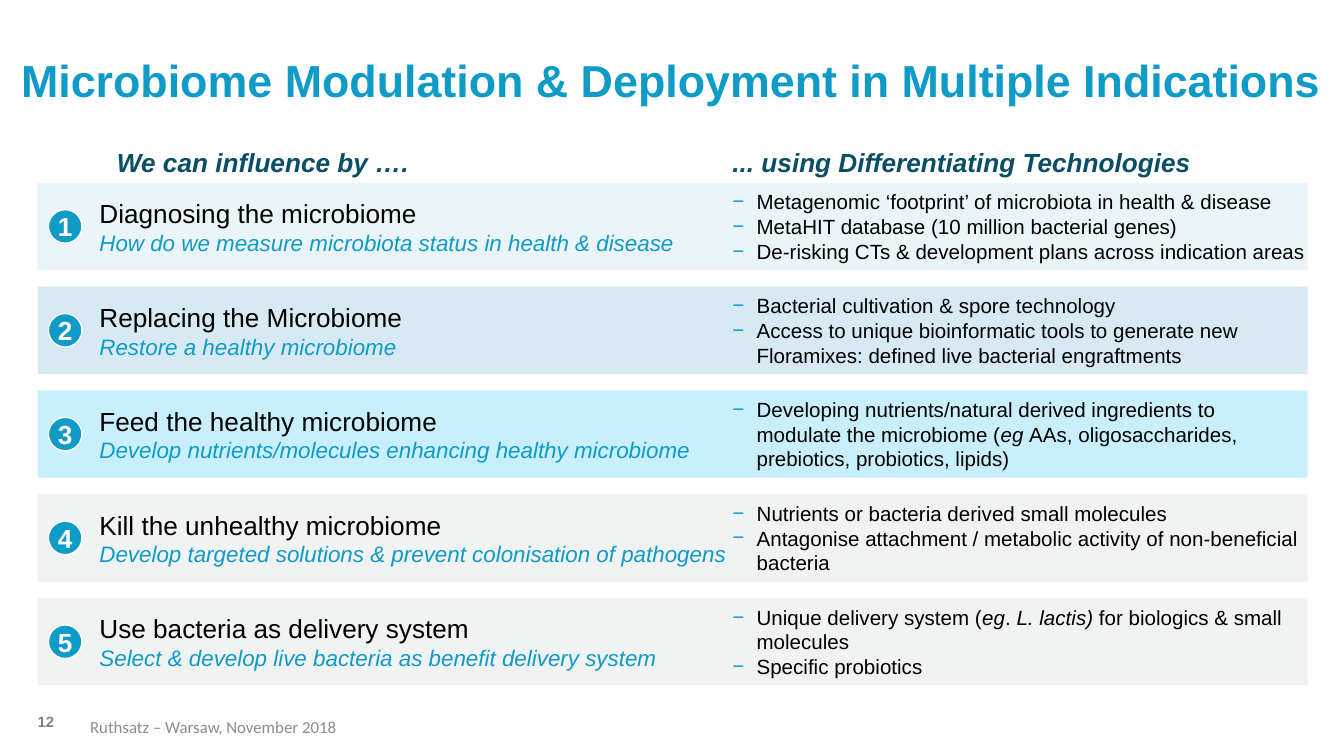
from lxml.etree import SubElement
from pptx import Presentation
from pptx.dml.color import RGBColor
from pptx.enum.shapes import MSO_SHAPE
from pptx.enum.text import MSO_ANCHOR, PP_ALIGN
from pptx.oxml.ns import qn
from pptx.util import Inches, Pt

COLORS = {
    "blue": "0F9BC7", "teal": "084E64", "black": "000000", "white": "FFFFFF",
    "gray": "7B808B", "foot": "8C8C8C",
    "pale": "EBF4F9", "mist": "D7EAF4", "cyan": "C8EFFB", "ash": "F1F2F2",
}
FORMATS = {
    "title": {"size": 24, "bold": True, "color": "blue"},
    "head": {"size": 14, "bold": True, "italic": True, "color": "teal"},
    "goal": {"size": 14, "color": "black"},
    "aim": {"size": 12, "italic": True, "color": "blue"},
    "tech": {"size": 11, "color": "black"},
    "badge": {"size": 14, "bold": True, "color": "white"},
    "page": {"size": 8, "bold": True, "color": "gray"},
    "foot": {"size": 9, "name": "Calibri", "color": "foot"},
}
TITLE = "Microbiome Modulation & Deployment in Multiple Indications"
HEADS = [(0.87, 2.18, "We can influence by …."),
         (5.45, 3.42, "... using Differentiating Technologies")]
FOOTER = "Ruthsatz – Warsaw, November 2018"
PAGE = "12"

# Band colour, goal, aim, width of the technology column, technologies.
# Asterisks switch italics on and off.
ROWS = [
    ("pale", "Diagnosing the microbiome",
     "How do we measure microbiota status in health & disease", 4.43,
     ["Metagenomic ‘footprint’ of microbiota in health & disease",
      "MetaHIT database (10 million bacterial genes)",
      "De-risking CTs & development plans across indication areas"]),
    ("mist", "Replacing the Microbiome", "Restore a healthy microbiome", 3.94,
     ["Bacterial cultivation & spore technology",
      "Access to unique bioinformatic tools to generate new "
      "Floramixes: defined live bacterial engraftments"]),
    ("cyan", "Feed the healthy microbiome",
     "Develop nutrients/molecules enhancing healthy microbiome", 4.26,
     ["Developing nutrients/natural derived ingredients to modulate the "
      "microbiome (*eg *AAs, oligosaccharides, prebiotics, probiotics, lipids)"]),
    ("ash", "Kill the unhealthy microbiome",
     "Develop targeted solutions & prevent colonisation of pathogens", 4.35,
     ["Nutrients or bacteria derived small molecules",
      "Antagonise attachment / metabolic activity of non-beneficial bacteria"]),
    ("ash", "Use bacteria as delivery system",
     "Select & develop live bacteria as benefit delivery system", 4.2,
     ["Unique delivery system (*eg*. *L. lactis)* for biologics & small molecules",
      "Specific probiotics"]),
]
WIDTH = 10
HEIGHT = WIDTH * 9 / 16
LEFT, TOP, BAND = 0.28, 1.36, 0.65
PITCH = (4.45 - TOP) / (len(ROWS) - 1)
GOAL_X, TECH_X, DOT = 0.74, 5.45, 0.25
INDENT = 0.18


def color(name):
    return RGBColor.from_string(COLORS[name])


def style(run, look):
    values = {"name": "Arial", **FORMATS[look]}
    run.font.color.rgb = color(values.pop("color"))
    values["size"] = Pt(values["size"])
    for key, value in values.items():
        setattr(run.font, key, value)


def dash(para):
    """Give a paragraph a hanging dash in blue."""
    props = para._p.get_or_add_pPr()
    props.set("marL", str(Inches(INDENT)))
    props.set("indent", str(-Inches(INDENT)))
    tint = SubElement(props, qn("a:buClr"))
    SubElement(tint, qn("a:srgbClr")).set("val", COLORS["blue"])
    SubElement(props, qn("a:buFont")).set("typeface", "Arial")
    SubElement(props, qn("a:buChar")).set("char", "−")


def write(shape, lines, align=PP_ALIGN.LEFT, anchor=MSO_ANCHOR.TOP,
          wrap=True, bullet=False):
    """Fill a shape with (text, look) paragraphs."""
    frame = shape.text_frame
    frame.word_wrap, frame.vertical_anchor = wrap, anchor
    for side in ("left", "right", "top", "bottom"):
        setattr(frame, "margin_" + side, 0)
    for i, (text, look) in enumerate(lines):
        para = frame.add_paragraph() if i else frame.paragraphs[0]
        para.alignment = align
        if bullet:
            dash(para)
        for j, part in enumerate(text.split("*")):
            run = para.add_run()
            run.text = part
            style(run, look)
            if j % 2:
                run.font.italic = True


def label(slide, box, lines, **options):
    write(slide.shapes.add_textbox(*map(Inches, box)), lines, **options)


def block(slide, kind, box, fill, line=None):
    shape = slide.shapes.add_shape(kind, *map(Inches, box))
    shape.shadow.inherit = False
    shape.fill.solid()
    shape.fill.fore_color.rgb = color(fill)
    if line:
        shape.line.color.rgb = color(line)
        shape.line.width = Pt(0.75)
    else:
        shape.line.fill.background()
    return shape


def add_row(slide, i, row):
    fill, goal, aim, width, techs = row
    top = TOP + i * PITCH
    block(slide, MSO_SHAPE.RECTANGLE, (LEFT, top, WIDTH - 0.55, BAND), fill)
    label(slide, (GOAL_X, top + 0.11, 4.7, 0.44),
          [(goal, "goal"), (aim, "aim")], wrap=False)
    label(slide, (TECH_X, top + 0.05, width, 0.56),
          [(tech, "tech") for tech in techs], bullet=True)
    badge = block(slide, MSO_SHAPE.OVAL,
                  (0.36, top + (BAND - DOT) / 2, DOT, DOT), "blue", "white")
    write(badge, [(str(i + 1), "badge")], PP_ALIGN.CENTER, MSO_ANCHOR.MIDDLE)


def main():
    deck = Presentation()
    deck.slide_width, deck.slide_height = Inches(WIDTH), Inches(HEIGHT)
    slide = deck.slides.add_slide(deck.slide_layouts[6])
    label(slide, (-0.21, 0.39, 10.4, 0.61), [(TITLE, "title")],
          align=PP_ALIGN.CENTER)
    for x, width, head in HEADS:
        label(slide, (x, 1.09, width, 0.24), [(head, "head")], wrap=False)
    for i, row in enumerate(ROWS):
        add_row(slide, i, row)
    label(slide, (LEFT, 5.3, 0.14, 0.18), [(PAGE, "page")])
    foot = block(slide, MSO_SHAPE.RECTANGLE, (0.41, 5.26, 2.35, 0.29), "white")
    write(foot, [(FOOTER, "foot")], PP_ALIGN.CENTER, MSO_ANCHOR.MIDDLE)
    deck.save("out.pptx")


if __name__ == "__main__":
    main()
